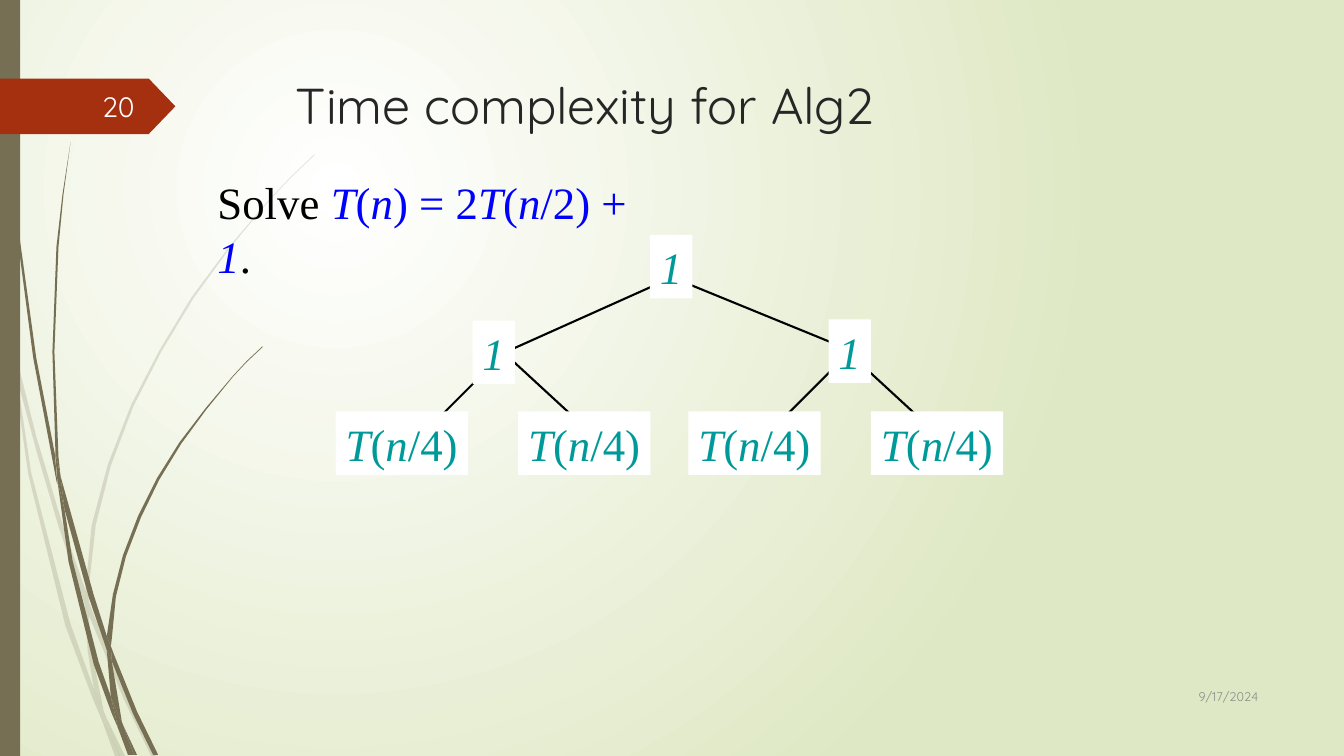
"""Build the slide on the time complexity of Alg2, with its recursion tree."""
import lxml.etree
import pptx
import pptx.dml.color
import pptx.enum.shapes
import pptx.enum.text
import pptx.oxml.ns
import pptx.util

Cm, Pt, qn = pptx.util.Cm, pptx.util.Pt, pptx.oxml.ns.qn
SHAPE = pptx.enum.shapes.MSO_SHAPE
ALIGN, ANCHOR = pptx.enum.text.PP_ALIGN, pptx.enum.text.MSO_ANCHOR
SANS, SERIF = "Quicksand", "Times New Roman"
OLIVE, RED, TEAL, BLUE, BLACK, WHITE = "766F54", "A53010", "009999", "0000FF", "000000", "FFFFFF"

BLADE_UNITS = 750
PALE_BLADES = [
    [(11, 350), (9, 322), (0, 282), (0, 299), (10, 344)],
    [(58, 522), (84, 599), (85, 586), (62, 520), (36, 433), (14, 345), (17, 376), (36, 447)],
    [(92, 607), (88, 596), (88, 610), (123, 694), (150, 750), (155, 750), (127, 692)],
    [(119, 750), (124, 750), (105, 711)],
    [(93, 683), (70, 619), (31, 469), (17, 376), (11, 350), (28, 470), (65, 621), (92, 693),
     (101, 714), (99, 707)],
    [(84, 599), (87, 646), (93, 683), (96, 692), (105, 711), (103, 706), (91, 646), (88, 610),
     (88, 608)],
    [(88, 584), (95, 521), (110, 462), (132, 404), (160, 349), (192, 296), (229, 245),
     (268, 198), (290, 175), (312, 154), (312, 153), (289, 175), (268, 197), (228, 244),
     (190, 295), (158, 348), (130, 402), (107, 461), (91, 521), (85, 584), (85, 586),
     (88, 596)],
    [(101, 714), (114, 750), (119, 750)],
    [(88, 608), (88, 610), (88, 596), (85, 586), (84, 599)],
    [(96, 692), (93, 683), (99, 707), (101, 714), (119, 750), (105, 711)],
]
DARK_BLADES = [
    [(7, 110), (17, 233), (33, 355), (56, 477), (57, 481), (55, 457), (55, 453), (36, 355),
     (19, 232), (8, 109), (5, 48), (4, 0), (3, 0), (4, 48)],
    [(88, 592), (106, 645), (106, 633), (106, 631), (93, 590), (60, 472), (64, 505)],
    [(113, 649), (110, 641), (111, 656), (132, 708), (152, 749), (157, 749), (136, 706)],
    [(110, 691), (98, 657), (72, 556), (64, 505), (57, 477), (68, 557), (93, 659), (111, 708),
     (117, 722), (116, 717)],
    [(60, 472), (58, 453), (54, 349), (58, 245), (63, 193), (70, 141), (62, 193), (56, 245),
     (52, 349), (55, 449)],
    [(133, 749), (136, 749), (122, 719)],
    [(57, 477), (64, 505), (60, 472), (55, 449), (55, 453)],
    [(111, 633), (115, 592), (125, 552), (140, 513), (158, 476), (180, 440), (205, 406),
     (231, 374), (245, 359), (261, 344), (260, 344), (245, 358), (231, 373), (204, 405),
     (178, 439), (156, 474), (137, 512), (122, 551), (112, 590), (106, 631), (110, 641)],
    [(117, 722), (127, 749), (131, 749)],
    [(106, 645), (110, 691), (116, 706), (122, 719), (121, 716), (111, 656), (109, 651)],
    [(106, 645), (109, 651), (111, 656), (110, 641), (106, 631), (106, 633)],
    [(116, 706), (110, 691), (116, 717), (117, 722), (130, 749), (133, 749), (122, 719)],
]
TREE_EDGES = [
    (8.48, 1.07, 4.24, 2.97), (8.48, 1.07, 13.13, 2.97),
    (4.24, 2.97, 1.9, 5.31), (4.24, 2.97, 6.78, 5.31),
    (12.93, 2.97, 10.59, 5.31), (12.93, 2.97, 15.47, 5.31),
]
TREE_ONES = [(7.92, 0), (3.45, 2.16), (12.42, 2.13)]


def rgb(color):
    """Return the colour for a hex string."""
    return pptx.dml.color.RGBColor.from_string(color)


def paint(sp, color):
    """Give a shape a plain fill without line or shadow."""
    sp.shadow.inherit = False
    sp.fill.solid()
    sp.fill.fore_color.rgb = rgb(color)
    sp.line.fill.background()


def style(p, name, size, color, align=ALIGN.LEFT):
    """Set the font and alignment of a paragraph."""
    p.alignment = align
    p.font.name, p.font.size, p.font.color.rgb = name, Pt(size), rgb(color)


def add_math(p, text, color):
    """Add runs to a paragraph, in italics between asterisks."""
    for i, part in enumerate(text.split("*")):
        if part:
            r = p.add_run()
            r.text = part
            r.font.italic = i % 2 == 1
            r.font.color.rgb = rgb(color)


def add_background(s):
    """Fill the slide with a radial gradient."""
    fill = s.background.fill
    fill.gradient()
    for stop, color in zip(fill.gradient_stops, (WHITE, "DFE8C4")):
        stop.color.rgb = rgb(color)
    grad = s.element.find(".//" + qn("a:gradFill"))
    grad.remove(grad.find(qn("a:lin")))
    radial = lxml.etree.SubElement(grad, qn("a:path"), {"path": "circle"})
    lxml.etree.SubElement(radial, qn("a:fillToRect"),
                          {"l": "50000", "t": "50000", "r": "100000", "b": "100000"})


def add_blade(s, x, y, h, points, opacity):
    """Draw one blade of grass, scaled to the height of its box."""
    builder = s.shapes.build_freeform(*points[0], scale=Cm(h) / BLADE_UNITS)
    builder.add_line_segments(points[1:], close=True)
    sp = builder.convert_to_shape(Cm(x), Cm(y))
    paint(sp, OLIVE)
    color = sp.element.spPr.find(".//" + qn("a:srgbClr"))
    lxml.etree.SubElement(color, qn("a:alpha"), {"val": str(opacity * 1000)})


def add_side_decor(s, x, y, w, h):
    """Draw the grass and the strip along the left edge."""
    for blades, opacity in ((PALE_BLADES, 20), (DARK_BLADES, 100)):
        for points in blades:
            add_blade(s, x, y, h, points, opacity)
    paint(s.shapes.add_shape(SHAPE.RECTANGLE, Cm(x), Cm(y), Cm(w), Cm(h)), OLIVE)


def add_number_badge(s, x, y, w, h):
    """Draw the arrow that holds the slide number."""
    sp = s.shapes.add_shape(SHAPE.PENTAGON, Cm(x), Cm(y), Cm(w), Cm(h))
    sp.adjustments[0] = .48
    paint(sp, RED)
    tf = sp.text_frame
    tf.margin_right = Cm(.69)
    tf.vertical_anchor = ANCHOR.MIDDLE
    tf.text = "20"
    style(tf.paragraphs[0], SANS, 20, "FEFFFF", ALIGN.RIGHT)


def add_title(s, x, y, w, h):
    """Place and format the title."""
    sp = s.shapes.title
    sp.left, sp.top, sp.width, sp.height = Cm(x), Cm(y), Cm(w), Cm(h)
    tf = sp.text_frame
    tf.auto_size = pptx.enum.text.MSO_AUTO_SIZE.NONE
    tf.vertical_anchor = ANCHOR.TOP
    tf.text = "Time complexity for Alg2"
    style(tf.paragraphs[0], SANS, 36, "262626")


def add_text_box(s, x, y, w, h):
    """Add a wrapping text box and return its text frame."""
    tf = s.shapes.add_textbox(Cm(x), Cm(y), Cm(w), Cm(h)).text_frame
    tf.word_wrap = True
    return tf


def add_recurrence(s, x, y, w, h):
    """Write the recurrence to solve."""
    p = add_text_box(s, x, y, w, h).paragraphs[0]
    style(p, SERIF, 32, BLACK)
    for text, color in (("Solve ", BLACK), ("*T*(*n*) = 2*T*(*n*/2) + *1*", BLUE), (".", BLACK)):
        add_math(p, text, color)


def add_date(s, x, y, w, h):
    """Write the date in the footer."""
    tf = add_text_box(s, x, y, w, h)
    tf.vertical_anchor = ANCHOR.MIDDLE
    tf.text = "9/17/2024"
    style(tf.paragraphs[0], SANS, 9, "8C8C8C", ALIGN.RIGHT)


def add_node(s, x, y, w, h, text):
    """Draw one white node of the tree."""
    sp = s.shapes.add_shape(SHAPE.RECTANGLE, Cm(x), Cm(y), Cm(w), Cm(h))
    paint(sp, WHITE)
    tf = sp.text_frame
    tf.word_wrap = False
    tf.vertical_anchor = ANCHOR.TOP
    style(tf.paragraphs[0], SERIF, 32, TEAL)
    add_math(tf.paragraphs[0], text, TEAL)


def add_tree(s, x, y, w, h):
    """Draw the recursion tree, with its leaves along the bottom."""
    for x1, y1, x2, y2 in TREE_EDGES:
        edge = s.shapes.add_connector(pptx.enum.shapes.MSO_CONNECTOR.STRAIGHT,
                                      Cm(x + x1), Cm(y + y1), Cm(x + x2), Cm(y + y2))
        edge.line.color.rgb, edge.line.width = rgb(BLACK), Pt(1.5)
        lxml.etree.SubElement(edge.element.spPr, qn("a:effectLst"))
    node_h, leaf_w = 1.6, 3.33
    for dx, dy in TREE_ONES:
        add_node(s, x + dx, y + dy, 1.07, node_h, "*1*")
    for dx in (0, 4.6, w - leaf_w - 4.6, w - leaf_w):
        add_node(s, x + dx, y + h - node_h, leaf_w, node_h, "*T*(*n*/4)")


def main():
    """Build and save the presentation."""
    prs = pptx.Presentation()
    prs.slide_width, prs.slide_height = Cm(33.87), Cm(19.05)
    s = prs.slides.add_slide(prs.slide_layouts[5])
    add_background(s)
    add_side_decor(s, 0, 0, .51, 19.05)
    add_number_badge(s, 0, 1.98, 4.42, 1.4)
    add_date(s, 28.78, 17.02, 3.18, 1.04)
    add_title(s, 7.2, 1.73, 24.77, 3.56)
    add_tree(s, 8.46, 5.92, 16.82, 6.05)
    add_recurrence(s, 5.23, 4.29, 11.6, 2.9)
    prs.save("out.pptx")


if __name__ == "__main__":
    main()
